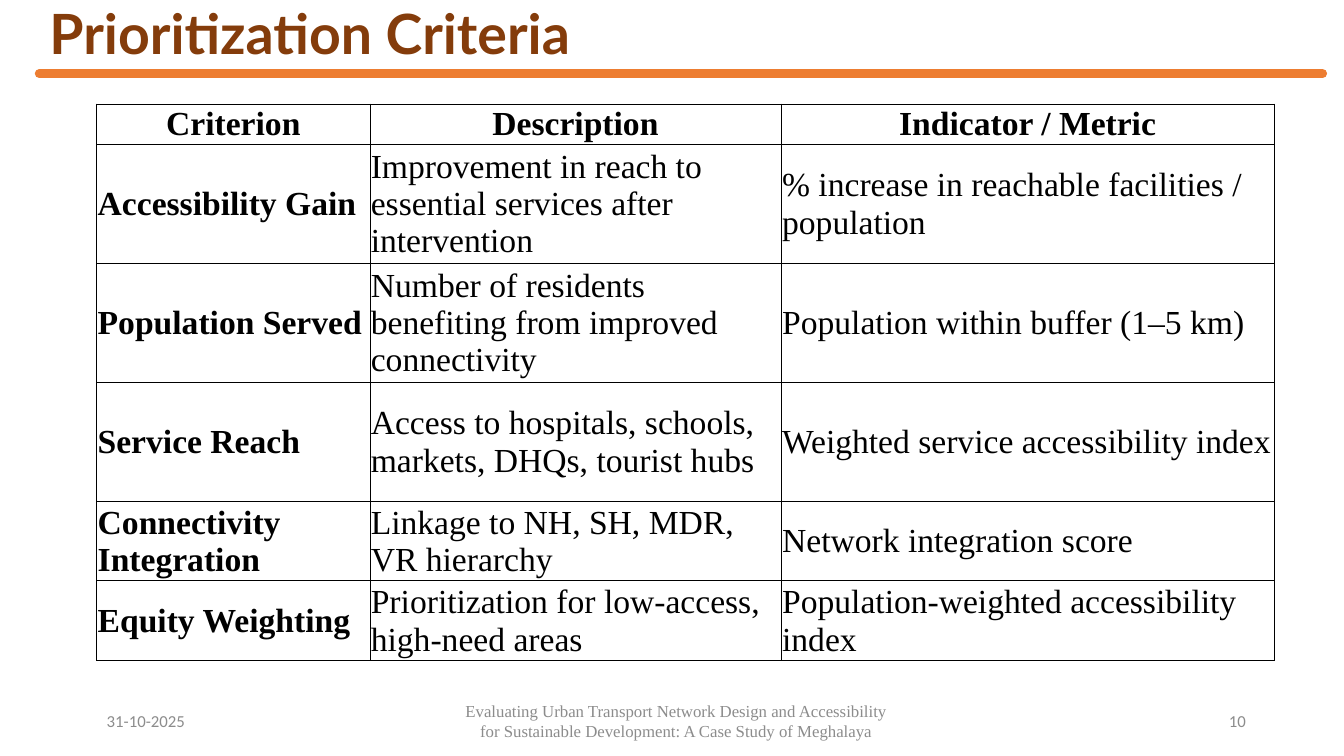
from lxml import etree
from pptx import Presentation
from pptx import util as u
from pptx.dml.color import RGBColor
from pptx.enum import shapes, text
from pptx.oxml.ns import qn

SERIF = "Times New Roman"
LEFT, CENTER, RIGHT = text.PP_ALIGN.LEFT, text.PP_ALIGN.CENTER, text.PP_ALIGN.RIGHT

COLUMN_WIDTHS = [195.1, 293.8, 352.1]
ROW_HEIGHTS = [28.8, 85, 85, 85, 56.9, 56.9]
CRITERIA = [
    ("Criterion", "Description", "Indicator / Metric"),
    ("Accessibility Gain",
     "Improvement in reach to essential services after intervention",
     "% increase in reachable facilities / population"),
    ("Population Served",
     "Number of residents benefiting from improved connectivity",
     "Population within buffer (1–5 km)"),
    ("Service Reach",
     "Access to hospitals, schools, markets, DHQs, tourist hubs",
     "Weighted service accessibility index"),
    ("Connectivity Integration",
     "Linkage to NH, SH, MDR, VR hierarchy",
     "Network integration score"),
    ("Equity Weighting",
     "Prioritization for low-access, high-need areas",
     "Population-weighted accessibility index"),
]


def color(value):
    return RGBColor.from_string(value)


def write(para, words, size, font, hue, bold=False, align=LEFT):
    para.alignment = align
    span = para.add_run()
    span.text = words
    span.font.size = u.Pt(size)
    span.font.name = font
    span.font.bold = bold
    span.font.color.rgb = color(hue)


def add_heading(page, left, top, width, height):
    # Title
    title = page.shapes.title
    title.left, title.top = u.Pt(left), u.Pt(top)
    title.width, title.height = u.Pt(width), u.Pt(height)
    frame = title.text_frame
    frame.auto_size = text.MSO_AUTO_SIZE.NONE
    frame.vertical_anchor = text.MSO_ANCHOR.MIDDLE
    para = frame.paragraphs[0]
    para.line_spacing = 0.9
    write(para, "Prioritization Criteria", 39.6, "Lato", "843C0B", bold=True)

    # Rule below the title
    level = u.Pt(top + height + 7.2)
    rule = page.shapes.add_connector(
        shapes.MSO_CONNECTOR.STRAIGHT,
        u.Pt(left), level, u.Pt(left + width + 7.2), level)
    rule.line.color.rgb = color("ED7D31")
    rule.line.width = u.Pt(6.5)
    rule.line._get_or_add_ln().set("cap", "rnd")
    etree.SubElement(rule._element.spPr, qn("a:effectLst"))


def add_borders(cell):
    properties = cell._tc.get_or_add_tcPr()
    for position, side in enumerate(("a:lnL", "a:lnR", "a:lnT", "a:lnB")):
        border = etree.Element(qn(side), w=str(u.Pt(0.5)))
        fill = etree.SubElement(border, qn("a:solidFill"))
        etree.SubElement(fill, qn("a:srgbClr"), val="000000")
        properties.insert(position, border)


def add_criteria_table(page, left, top):
    frame = page.shapes.add_table(
        len(CRITERIA), len(COLUMN_WIDTHS), u.Pt(left), u.Pt(top),
        u.Pt(sum(COLUMN_WIDTHS)), u.Pt(sum(ROW_HEIGHTS)))
    table = frame.table
    table.horz_banding = False
    for column, width in zip(table.columns, COLUMN_WIDTHS):
        column.width = u.Pt(width)
    for row, height in zip(table.rows, ROW_HEIGHTS):
        row.height = u.Pt(height)

    # Cells: the header row and the first column are bold
    for i, entries in enumerate(CRITERIA):
        for j, words in enumerate(entries):
            cell = table.cell(i, j)
            cell.margin_left = cell.margin_right = cell.margin_top = u.Pt(0.7)
            cell.margin_bottom = 0
            cell.vertical_anchor = text.MSO_ANCHOR.MIDDLE
            cell.fill.background()
            add_borders(cell)
            write(cell.text_frame.paragraphs[0], words, 24, SERIF, "000000",
                  bold=i == 0 or j == 0, align=CENTER if i == 0 else LEFT)


def add_footer(page, left, top, width, height):
    side, middle = 216, 324
    parts = [
        (left, side, "31-10-2025", "Calibri", LEFT),
        (left + (width - middle) / 2, middle,
         "Evaluating Urban Transport Network Design and Accessibility "
         "for Sustainable Development: A Case Study of Meghalaya",
         SERIF, CENTER),
        (left + width - side, side, "10", "Calibri", RIGHT),
    ]
    for start, extent, words, font, align in parts:
        box = page.shapes.add_textbox(
            u.Pt(start), u.Pt(top), u.Pt(extent), u.Pt(height))
        frame = box.text_frame
        frame.word_wrap = True
        frame.vertical_anchor = text.MSO_ANCHOR.MIDDLE
        write(frame.paragraphs[0], words, 12, font, "8C8C8C", align=align)


def main():
    deck = Presentation()
    deck.slide_width, deck.slide_height = u.Pt(960), u.Pt(540)
    page = deck.slides.add_slide(deck.slide_layouts[5])
    add_heading(page, 28.1, 6.5, 909.4, 38.9)
    add_criteria_table(page, 69.1, 74.2)
    add_footer(page, 69.1, 500.4, 828, 28.8)
    deck.save("out.pptx")


if __name__ == "__main__":
    main()
